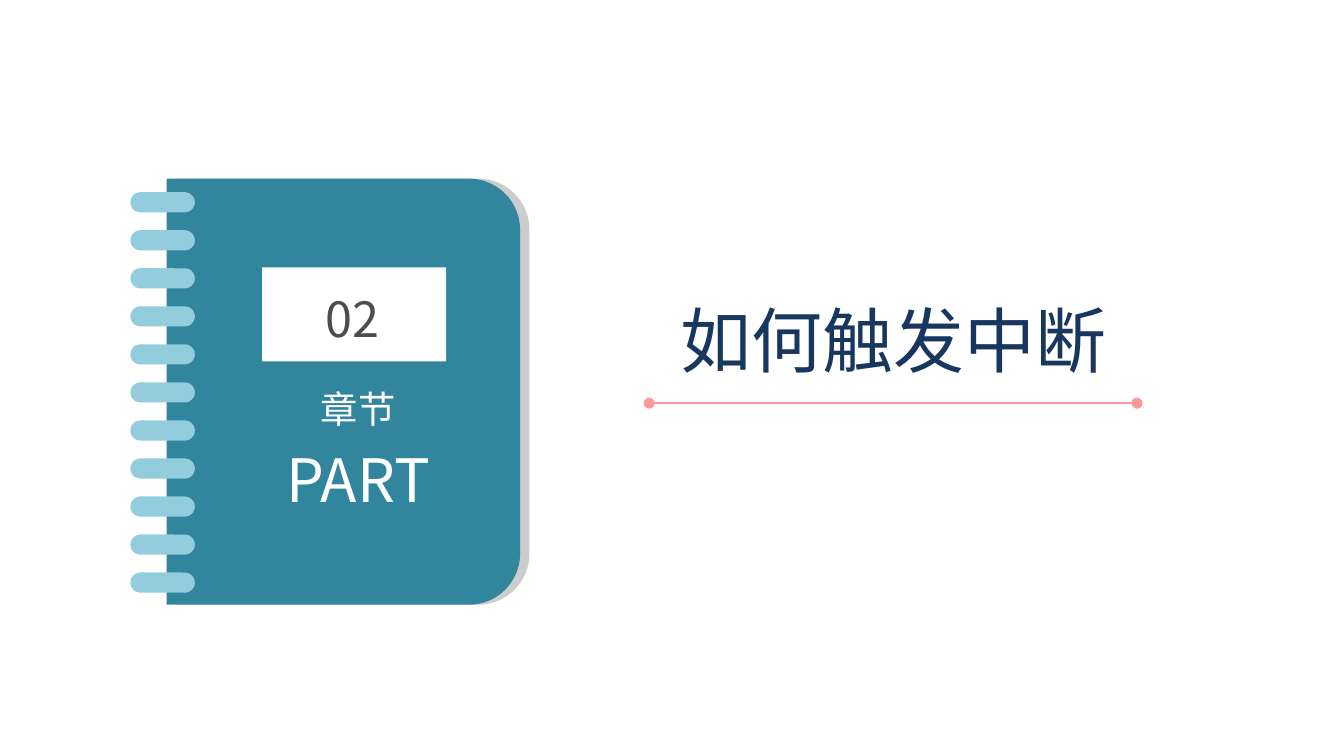
from math import cos, pi, sin

from lxml.etree import SubElement
from pptx import Presentation
from pptx.dml.color import RGBColor
from pptx.enum.shapes import MSO_CONNECTOR, MSO_SHAPE
from pptx.enum.text import MSO_ANCHOR, MSO_AUTO_SIZE, PP_ALIGN
from pptx.oxml.ns import qn
from pptx.util import Inches, Pt

NAVY = RGBColor(0x17, 0x37, 0x5E)
TEAL = RGBColor(0x31, 0x85, 0x9C)
SKY = RGBColor(0x93, 0xCD, 0xDD)
PINK = RGBColor(0xFF, 0x99, 0x99)
SILVER = RGBColor(0xCC, 0xCC, 0xCC)
CHARCOAL = RGBColor(0x4D, 0x4D, 0x4D)
WHITE = RGBColor(0xFF, 0xFF, 0xFF)

CJK_FONT = "Noto Sans CJK SC"
COVER_TOP, COVER_WIDTH, COVER_HEIGHT, COVER_RADIUS = 1.33, 2.63, 3.17, 0.38
RING_COUNT, RING_TOP, RING_BOTTOM = 11, 1.43, 4.26


def paint(shape, color):
    """Give a shape a plain fill with no outline or shadow."""
    shape.fill.solid()
    shape.fill.fore_color.rgb = color
    shape.line.fill.background()
    shape.shadow.inherit = False


def add_block(page, kind, left, top, width, height, color):
    """Add a plain preset shape."""
    block = page.shapes.add_shape(
        kind, Inches(left), Inches(top), Inches(width), Inches(height))
    paint(block, color)
    return block


def add_cover(page, left, color):
    """Add a notebook cover rounded at its right corners."""
    right, bottom = left + COVER_WIDTH, COVER_TOP + COVER_HEIGHT
    center_x = right - COVER_RADIUS
    angles = [step * pi / 40 for step in range(21)]
    upper = [(center_x + COVER_RADIUS * sin(angle),
              COVER_TOP + COVER_RADIUS * (1 - cos(angle))) for angle in angles]
    lower = [(x, COVER_TOP + bottom - y) for x, y in reversed(upper)]
    outline = page.shapes.build_freeform(
        Inches(left), Inches(COVER_TOP), scale=1.0)
    outline.add_line_segments(
        [(Inches(x), Inches(y)) for x, y in upper + lower + [(left, bottom)]])
    paint(outline.convert_to_shape(), color)


def add_rings(page):
    """Add the evenly spaced binding rings."""
    step = (RING_BOTTOM - RING_TOP) / (RING_COUNT - 1)
    for index in range(RING_COUNT):
        ring = add_block(page, MSO_SHAPE.ROUNDED_RECTANGLE, 0.97,
                         RING_TOP + index * step, 0.48, 0.15, SKY)
        ring.adjustments[0] = 0.5


def add_rule(page):
    """Add the title underline with round ends."""
    rule = page.shapes.add_connector(
        MSO_CONNECTOR.STRAIGHT, Inches(4.83), Inches(3), Inches(8.46), Inches(3))
    rule.line.color.rgb = PINK
    rule.line.width = Pt(1)
    outline = rule.line._get_or_add_ln()
    for end in ("a:headEnd", "a:tailEnd"):
        SubElement(outline, qn(end), type="oval")
    SubElement(rule._element.spPr, qn("a:effectLst"))


def write_lines(box, lines, font_name, color):
    """Fill a text shape with centred lines of given sizes."""
    frame = box.text_frame
    frame.word_wrap = True
    frame.auto_size = MSO_AUTO_SIZE.SHAPE_TO_FIT_TEXT
    frame.vertical_anchor = MSO_ANCHOR.MIDDLE
    frame.margin_left = frame.margin_right = 0
    frame.margin_top = frame.margin_bottom = 0
    for index, (text, size) in enumerate(lines):
        para = frame.add_paragraph() if index else frame.paragraphs[0]
        para.alignment = PP_ALIGN.CENTER
        para.space_before = Pt(size * 0.2 if index else 0)
        span = para.add_run()
        span.text = text
        span.font.name = font_name
        span.font.size = Pt(size)
        span.font.color.rgb = color
        SubElement(span.font._element, qn("a:ea"), typeface=CJK_FONT)


def add_label(page, left, top, width, height, lines, color):
    """Add a text box on the notebook."""
    box = page.shapes.add_textbox(
        Inches(left), Inches(top), Inches(width), Inches(height))
    write_lines(box, lines, CJK_FONT, color)


def set_title(page, text):
    """Place and format the title."""
    title = page.shapes.title
    title.left, title.top = Inches(3.85), Inches(2.2)
    title.width, title.height = Inches(5.6), Inches(0.64)
    write_lines(title, [(text, 38)], "Arial", NAVY)


def main():
    """Build the section slide."""
    deck = Presentation()
    deck.slide_width, deck.slide_height = Inches(10), Inches(10 * 9 / 16)
    page = deck.slides.add_slide(deck.slide_layouts[5])
    set_title(page, "如何触发中断")
    add_rule(page)
    add_cover(page, 1.31, SILVER)
    add_cover(page, 1.24, TEAL)
    add_block(page, MSO_SHAPE.RECTANGLE, 1.95, 1.99, 1.37, 0.7, WHITE)
    add_rings(page)
    add_label(page, 1.98, 2.15, 1.29, 0.44, [("02", 26)], CHARCOAL)
    add_label(page, 2.05, 2.86, 1.23, 0.98, [("章节", 20), ("PART", 32)], WHITE)
    deck.save("out.pptx")


if __name__ == "__main__":
    main()
